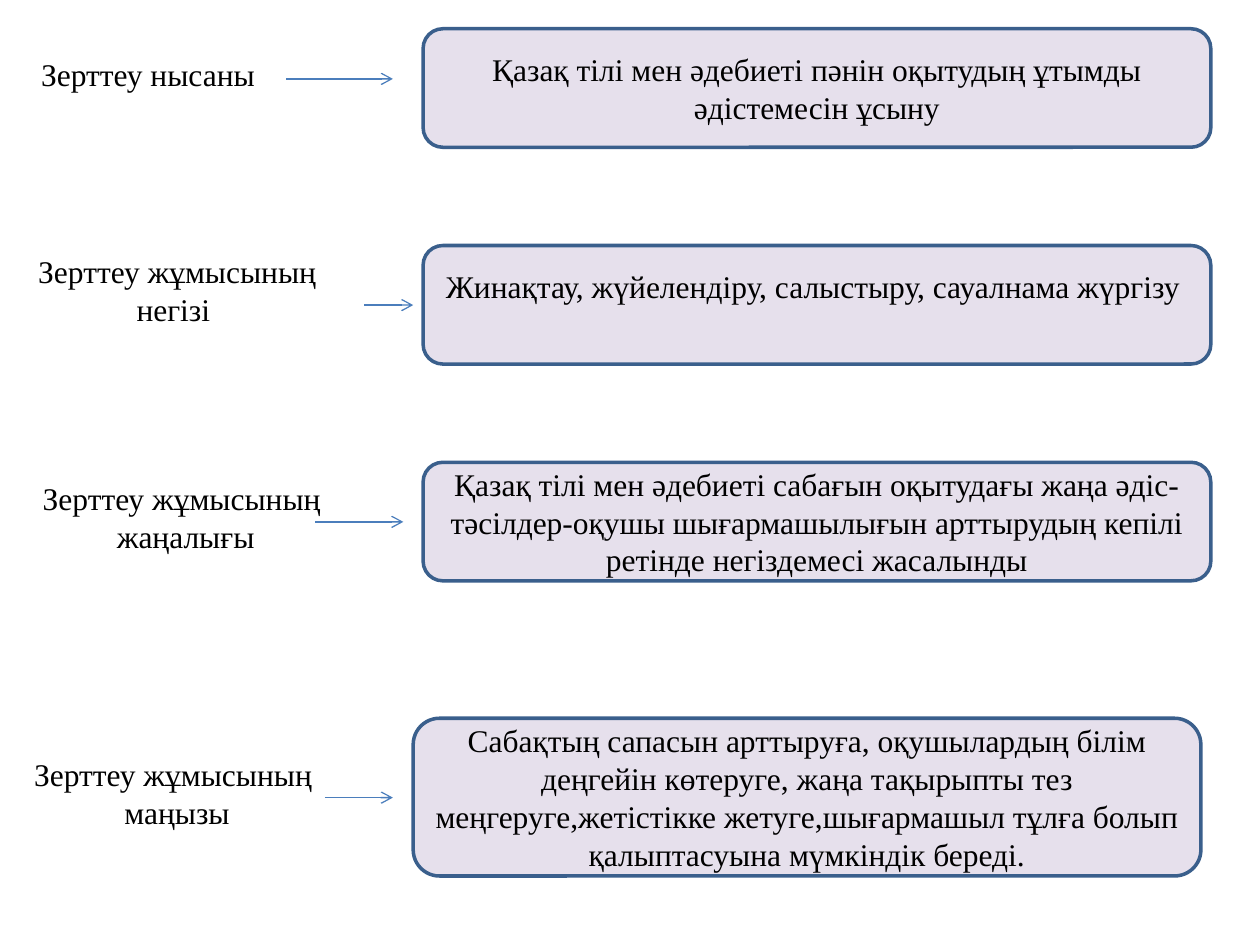
from dataclasses import dataclass

from lxml.etree import SubElement
from pptx import Presentation
from pptx.dml.color import RGBColor
from pptx.enum.shapes import MSO_CONNECTOR as Connector, MSO_SHAPE as Shape
from pptx.enum.text import MSO_ANCHOR as Anchor, PP_ALIGN as Align
from pptx.oxml.ns import qn
from pptx.util import Cm, Pt


@dataclass(frozen=True)
class Theme:
    font: str = "Times New Roman"
    size: Pt = Pt(18)
    ink: RGBColor = RGBColor(0x00, 0x00, 0x00)
    panel: RGBColor = RGBColor(0xE6, 0xE0, 0xEC)
    border: RGBColor = RGBColor(0x3A, 0x5F, 0x8C)
    arrow: RGBColor = RGBColor(0x4B, 0x7E, 0xBC)
    border_width: Pt = Pt(2)
    arrow_width: Pt = Pt(0.75)


theme = Theme()


def write(frame, lines, align):
    """Fill a text frame with one paragraph per line."""
    for number, line in enumerate(lines):
        paragraph = frame.paragraphs[0] if number == 0 else frame.add_paragraph()
        paragraph.text = line
        paragraph.alignment = align
        paragraph.font.name = theme.font
        paragraph.font.size = theme.size
        paragraph.font.color.rgb = theme.ink


prs = Presentation()
prs.slide_width, prs.slide_height = Cm(25.4), Cm(19.05)
slide = prs.slides.add_slide(prs.slide_layouts[6])
shapes = slide.shapes

# Topic labels: lines, left, top, width, height, alignment, wrap
topics = [
    (["Зерттеу нысаны"], 0.58, 0.99, 5.77, 1.02, Align.LEFT, True),
    (["Зерттеу жұмысының", "негізі "], 0.41, 4.95, 7.75, 2.57, Align.CENTER, True),
    (["Зерттеу жұмысының", " жаңалығы"], 0.58, 9.53, 6.17, 1.8, Align.CENTER, False),
    (["Зерттеу жұмысының ", "маңызы"], 0.41, 15.09, 6.32, 1.8, Align.CENTER, False),
]
topic_frames = []
for lines, left, top, width, height, align, wrap in topics:
    frame = shapes.add_textbox(Cm(left), Cm(top), Cm(width), Cm(height)).text_frame
    frame.word_wrap = wrap
    write(frame, lines, align)
    topic_frames.append(frame)

# The first line of the second topic sits left of its second line
basis = topic_frames[1].paragraphs[0]
basis._p.get_or_add_pPr().set("marR", str(Cm(1.42)))

# Answer panels: text, left, top, height, bottom inset
first_top, pitch = 0.58, 4.37
answers = [
    ("Қазақ тілі мен әдебиеті пәнін оқытудың ұтымды әдістемесін ұсыну",
     8.53, first_top, 2.39, 0.13),
    ("Жинақтау, жүйелендіру, салыстыру, сауалнама жүргізу ",
     8.53, first_top + pitch, 2.39, 0.89),
    ("Қазақ тілі мен әдебиеті сабағын оқытудағы жаңа әдіс-тәсілдер-оқушы "
     "шығармашылығын арттырудың кепілі ретінде негіздемесі жасалынды",
     8.53, first_top + 2 * pitch, 2.39, 0.13),
    ("Сабақтың сапасын арттыруға, оқушылардың білім деңгейін көтеруге, "
     "жаңа тақырыпты тез меңгеруге,жетістікке жетуге,шығармашыл тұлға "
     "болып қалыптасуына мүмкіндік береді.",
     8.33, 14.48, 3.18, 0.13),
]
for text, left, top, height, bottom_inset in answers:
    panel = shapes.add_shape(
        Shape.ROUNDED_RECTANGLE, Cm(left), Cm(top), Cm(15.88), Cm(height))
    panel.shadow.inherit = False
    panel.fill.solid()
    panel.fill.fore_color.rgb = theme.panel
    panel.line.color.rgb = theme.border
    panel.line.width = theme.border_width
    frame = panel.text_frame
    frame.word_wrap = True
    frame.vertical_anchor = Anchor.MIDDLE
    frame.margin_bottom = Cm(bottom_inset)
    write(frame, [text], Align.CENTER)

# Arrows from topics to answers: start, end, height on the slide
for start, end, y in [(5.77, 7.92, 1.59), (7.34, 8.33, 6.15),
                      (6.35, 8.13, 10.52), (6.55, 7.92, 16.08)]:
    arrow = shapes.add_connector(
        Connector.STRAIGHT, Cm(start), Cm(y), Cm(end), Cm(y))
    arrow.line.color.rgb = theme.arrow
    arrow.line.width = theme.arrow_width
    SubElement(arrow.line._get_or_add_ln(), qn("a:tailEnd"), type="arrow")
    SubElement(arrow._element.spPr, qn("a:effectLst"))

prs.save("out.pptx")
